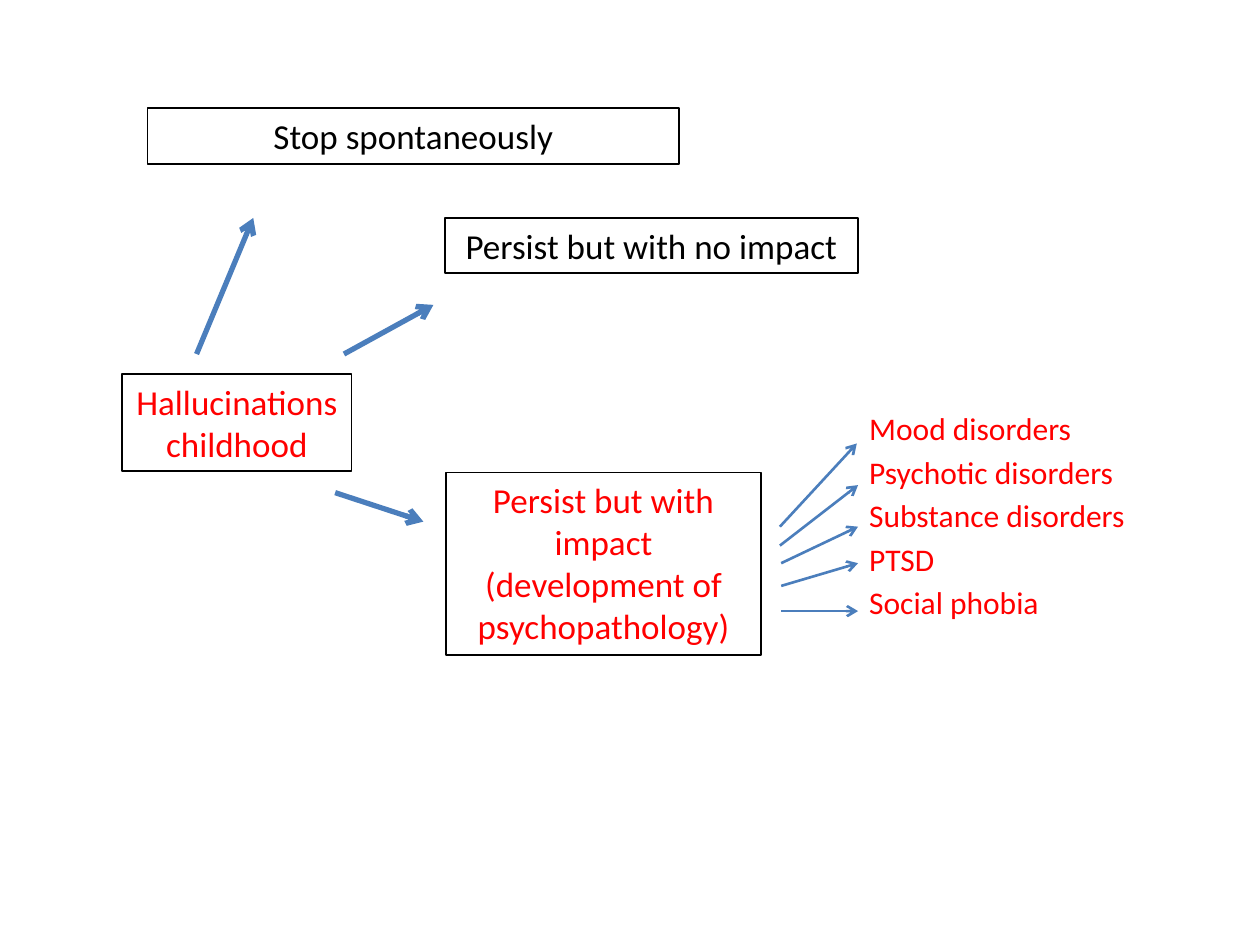
"""Build a slide showing the possible courses of childhood hallucinations."""
from lxml import etree
from pptx import Presentation, util as u
from pptx.dml.color import RGBColor
from pptx.enum import shapes, text
from pptx.oxml.ns import qn

COLORS = {"arrow": "4B7EBC", "border": "000000", "plain": "000000", "alert": "FF0000"}
FONT = "Calibri"

BOXES = [
    (["Hallucinations", "childhood"], (0.97, 2.97, 1.82, 0.77), "alert", False),
    (["Stop spontaneously"], (1.17, 0.86, 4.22, 0.44), "plain", True),
    (["Persist but with impact (development of psychopathology)"],
     (3.54, 3.75, 2.5, 1.45), "alert", True),
    (["Persist but with no impact"], (3.53, 1.73, 3.28, 0.44), "plain", True),
]
DISORDERS = ["Mood disorders", "Psychotic disorders", "Substance disorders",
             "PTSD", "Social phobia"]
DISORDERS_AREA = (6.8, 3.2, 2.97, 2.27)
COURSE_ARROWS = [
    (1.56, 2.81, 2.01, 1.73),
    (2.66, 3.91, 3.36, 4.14),
    (2.73, 2.81, 3.44, 2.42),
]
DISORDER_ARROWS = [
    (6.19, 4.18, 6.8, 3.52),
    (6.19, 4.33, 6.81, 3.85),
    (6.2, 4.47, 6.81, 4.18),
    (6.2, 4.65, 6.81, 4.47),
    (6.2, 4.85, 6.81, 4.85),
]


def inches(values):
    return [u.Inches(value) for value in values]


def color(name):
    return RGBColor.from_string(COLORS[name])


def write_paragraphs(frame, lines, size, color_name, alignment):
    for index, line in enumerate(lines):
        paragraph = frame.paragraphs[0] if index == 0 else frame.add_paragraph()
        paragraph.alignment = alignment
        run = paragraph.add_run()
        run.text = line
        run.font.name = FONT
        run.font.size = u.Pt(size)
        run.font.color.rgb = color(color_name)


def add_box(slide, lines, area, color_name, wrap):
    shape = slide.shapes.add_shape(shapes.MSO_SHAPE.RECTANGLE, *inches(area))
    shape.shadow.inherit = False
    shape.fill.background()
    shape.line.color.rgb = color("border")
    shape.line.width = u.Pt(1)
    frame = shape.text_frame
    frame.word_wrap = wrap
    frame.auto_size = text.MSO_AUTO_SIZE.SHAPE_TO_FIT_TEXT
    frame.vertical_anchor = text.MSO_ANCHOR.TOP
    write_paragraphs(frame, lines, 20, color_name, text.PP_ALIGN.CENTER)


def add_arrow(slide, ends, width):
    connector = slide.shapes.add_connector(shapes.MSO_CONNECTOR.STRAIGHT, *inches(ends))
    connector.line.color.rgb = color("arrow")
    connector.line.width = u.Pt(width)
    etree.SubElement(connector.line._get_or_add_ln(), qn("a:tailEnd"), type="arrow")
    etree.SubElement(connector._element.spPr, qn("a:effectLst"))


def add_disorders(slide):
    frame = slide.shapes.add_textbox(*inches(DISORDERS_AREA)).text_frame
    frame.word_wrap = True
    write_paragraphs(frame, DISORDERS, 18, "alert", text.PP_ALIGN.LEFT)
    for paragraph in frame.paragraphs:
        paragraph.space_before = u.Pt(3.2)
        properties = paragraph._p.get_or_add_pPr()
        properties.set("marL", str(u.Inches(0.38)))
        properties.set("indent", str(-u.Inches(0.38)))


def main():
    presentation = Presentation()
    presentation.slide_width, presentation.slide_height = inches((10, 7.5))
    slide = presentation.slides.add_slide(presentation.slide_layouts[6])
    for box in BOXES:
        add_box(slide, *box)
    add_disorders(slide)
    for arrows, width in ((COURSE_ARROWS, 3), (DISORDER_ARROWS, 1.5)):
        for ends in arrows:
            add_arrow(slide, ends, width)
    presentation.save("out.pptx")


if __name__ == "__main__":
    main()
